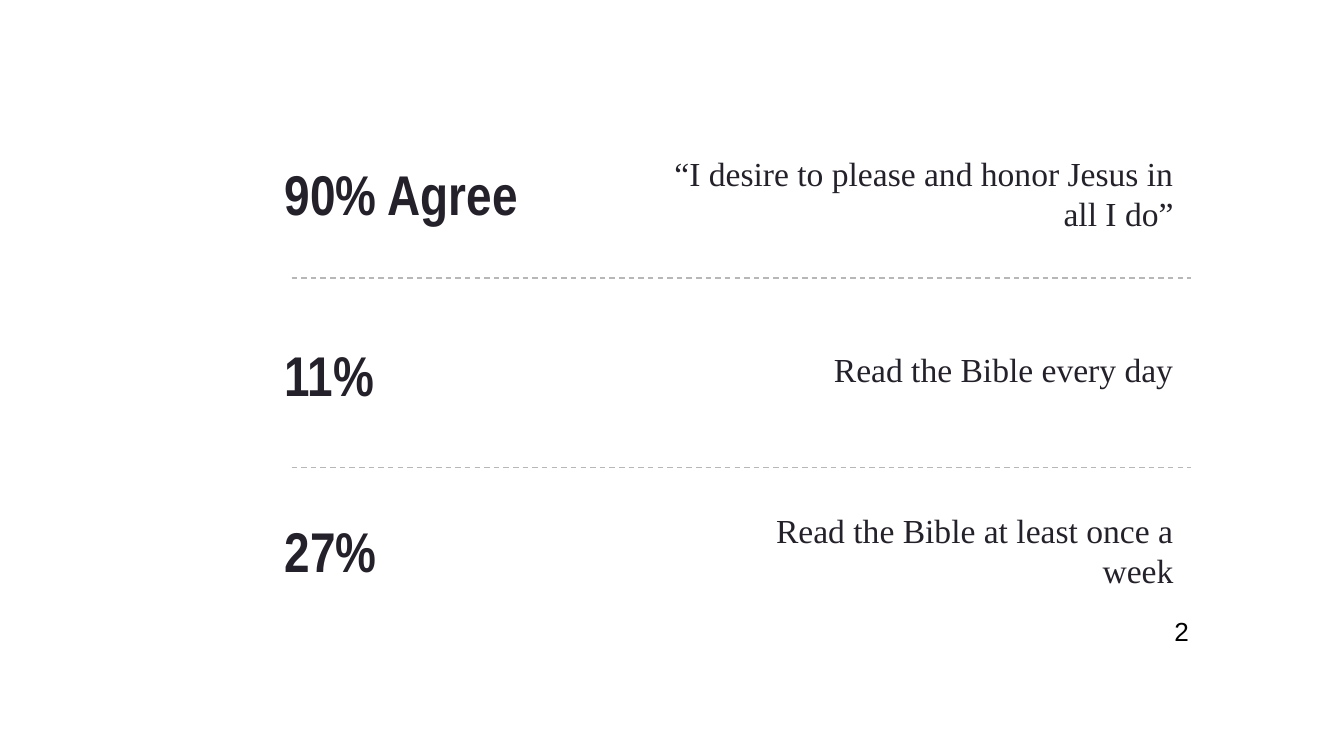
from lxml.etree import SubElement
from pptx import Presentation
from pptx.dml.color import RGBColor
from pptx.enum.dml import MSO_LINE
from pptx.enum.shapes import MSO_CONNECTOR
from pptx.enum.text import MSO_ANCHOR, PP_ALIGN
from pptx.oxml.ns import qn
from pptx.util import Inches, Pt

COLORS = {"ink": "25212A", "rule": "B7B7B7", "number": "000000"}


def write_text(frame, text, *, font, size, color, bold=False,
               align=PP_ALIGN.LEFT):
    """Fill the first paragraph of a text frame and format it."""
    para = frame.paragraphs[0]
    para.alignment = align
    span = para.add_run()
    span.text = text
    span.font.name = font
    span.font.size = Pt(size)
    span.font.bold = bold
    span.font.color.rgb = RGBColor.from_string(COLORS[color])


class SurveyPage:
    """Holds the style and the current slide."""

    def __init__(self, deck):
        self.page = deck.slides.add_slide(deck.slide_layouts[6])
        self.inset = Inches(0.1)

    def add_text(self, text, left, top, width, height, **style):
        box = self.page.shapes.add_textbox(
            Inches(left), Inches(top), Inches(width), Inches(height))
        frame = box.text_frame
        frame.word_wrap = True
        frame.vertical_anchor = MSO_ANCHOR.MIDDLE
        frame.margin_left = frame.margin_right = self.inset
        frame.margin_top = frame.margin_bottom = self.inset
        write_text(frame, text, **style)

    def add_figure(self, text, top):
        self.add_text(text, 2.02, top, 6.56, 0.93,
                      font="Arial Narrow", size=30, color="ink", bold=True)

    def add_statement(self, text, top, width):
        right = 8.83
        self.add_text(text, right - width, top, width, 0.51,
                      font="Times New Roman", size=18, color="ink",
                      align=PP_ALIGN.RIGHT)

    def add_page_number(self, text):
        self.add_text(text, 8.64, 4.48, 0.6, 0.43,
                      font="Arial", size=14, color="number")

    def add_divider(self, top):
        divider = self.page.shapes.add_connector(
            MSO_CONNECTOR.STRAIGHT,
            Inches(2.17), Inches(top), Inches(8.86), Inches(top))
        divider.line.color.rgb = RGBColor.from_string(COLORS["rule"])
        divider.line.width = Pt(0.75)
        divider.line.dash_style = MSO_LINE.DASH
        SubElement(divider._element.spPr, qn("a:effectLst"))


def main():
    # Widescreen page, 16 to 9
    deck = Presentation()
    deck.slide_width = Inches(10)
    deck.slide_height = deck.slide_width * 9 // 16
    survey = SurveyPage(deck)

    # Survey rows: figure, its top, statement, its top and width
    rows = [
        ("90% Agree", 0.97,
         "“I desire to please and honor Jesus in all I do”", 1.18, 4.09),
        ("11%", 2.32, "Read the Bible every day", 2.49, 3.46),
        ("27%", 3.63, "Read the Bible at least once a week", 3.84, 3.46),
    ]
    for figure, figure_top, statement, statement_top, width in rows:
        survey.add_figure(figure, figure_top)
        survey.add_statement(statement, statement_top, width)

    # Page number
    survey.add_page_number("2")

    # Dividers between the rows
    for top in (2.07, 3.48):
        survey.add_divider(top)

    deck.save("out.pptx")


if __name__ == "__main__":
    main()
